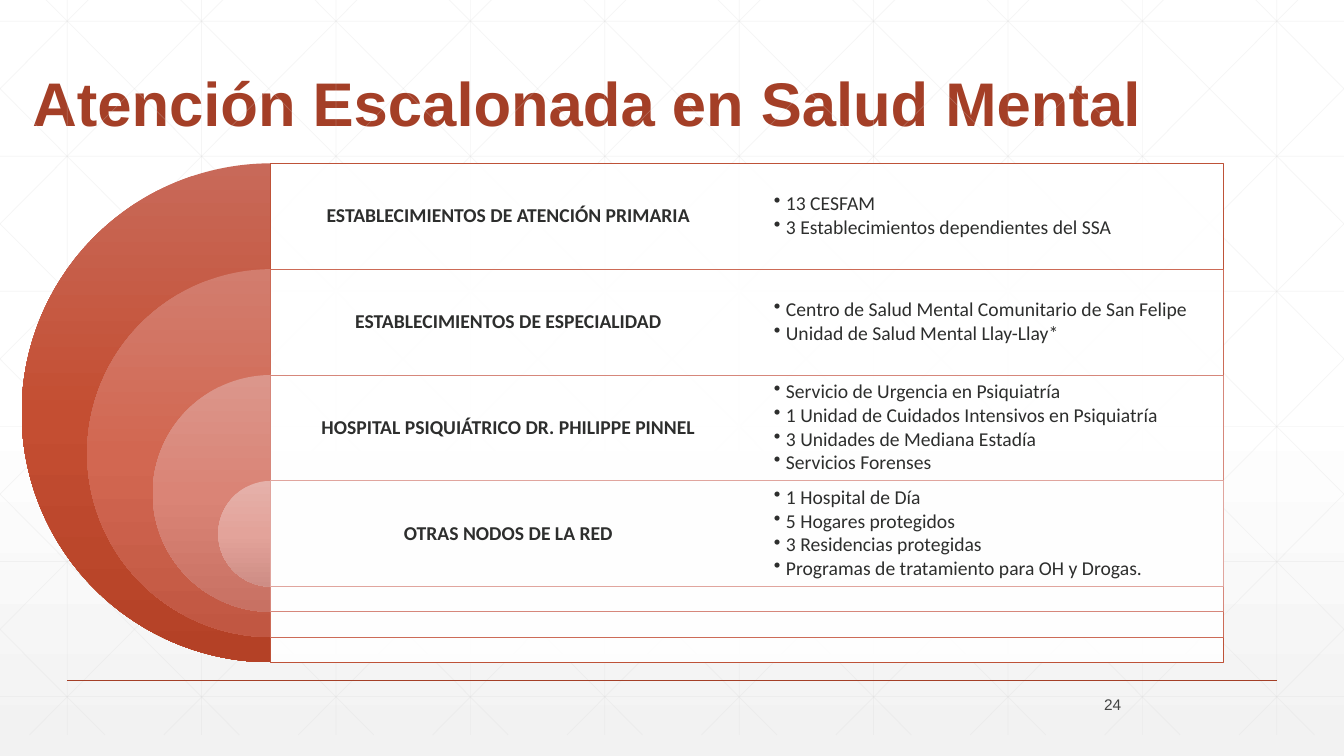
"""Build the slide on stepped mental health care: nested half discs beside four rows of services."""
from lxml import etree
from pptx import Presentation, util as u
from pptx.dml.color import RGBColor
from pptx.enum import shapes, text
from pptx.oxml.ns import qn

COLOURS = {"grid": "D9D9D9", "accent": "A43F27", "number": "424342", "ink": "2D2E2D", "panel": "FFFFFF"}
BACKDROP = [(0, "FFFFFF"), (53, "FFFFFF"), (100, "F2F2F2")]
WIDTH, HEIGHT = 13.33, 7.5
CELL = WIDTH / 10
GRID_TOP, GRID_BOTTOM = -0.21, 7.29
LEAN = 0.994
ROW, STEP = 1.05, 1.3
DISC, DISC_TOP, DISC_CENTRE = 4.95, 1.62, 2.69
PANEL_LEFT, PANEL_WIDTH = 2.68, 9.45
COLUMN = PANEL_WIDTH / 2

LEVELS = [
    ("ESTABLECIMIENTOS DE ATENCIÓN PRIMARIA",
     ["13 CESFAM", "3 Establecimientos dependientes del SSA"],
     ["C86959", "C44E32", "B44126"], "BE5238"),
    ("ESTABLECIMIENTOS DE ESPECIALIDAD",
     ["Centro de Salud Mental Comunitario de San Felipe", "Unidad de Salud Mental Llay-Llay*"],
     ["D27D6E", "D26751", "C15742"], "CC6B57"),
    ("HOSPITAL PSIQUIÁTRICO DR. PHILIPPE PINNEL",
     ["Servicio de Urgencia en Psiquiatría", "1 Unidad de Cuidados Intensivos en Psiquiatría",
      "3 Unidades de Mediana Estadía", "Servicios Forenses"],
     ["DB968B", "DA8476", "C87163"], "D6877B"),
    ("OTRAS NODOS DE LA RED",
     ["1 Hospital de Día", "5 Hogares protegidos", "3 Residencias protegidas",
      "Programas de tratamiento para OH y Drogas."],
     ["E5B1AA", "E3A39A", "CE8D85"], "E0A59E"),
]


def shade(fill, element, stops):
    """Fill from top to bottom through the given (percent, colour) stops."""
    fill.gradient()
    fill.gradient_angle = 270
    stop_list = element.find(".//" + qn("a:gsLst"))
    for default_stop in list(stop_list):
        stop_list.remove(default_stop)
    for percent, colour in stops:
        stop = etree.SubElement(stop_list, qn("a:gs"), pos=str(percent * 1000))
        etree.SubElement(stop, qn("a:srgbClr"), val=colour)


def write(frame, lines, size, colour, font, bold, align, anchor, margins=(0.1, 0.05)):
    """Set the lines of a text frame and return its paragraphs."""
    side, edge = (u.Inches(margin) for margin in margins)
    frame_format = {"text": "\n".join(lines), "word_wrap": True, "vertical_anchor": anchor,
                    "auto_size": text.MSO_AUTO_SIZE.NONE, "margin_left": side, "margin_right": side,
                    "margin_top": edge, "margin_bottom": edge}
    for name, value in frame_format.items():
        setattr(frame, name, value)
    for paragraph in frame.paragraphs:
        paragraph.alignment = align
        paragraph.line_spacing = 0.9
        run_font = paragraph.runs[0].font
        for name, value in {"size": u.Pt(size), "name": font, "bold": bold}.items():
            setattr(run_font, name, value)
        run_font.color.rgb = RGBColor.from_string(colour)
    return frame.paragraphs


deck = Presentation()
deck.slide_width, deck.slide_height = u.Inches(WIDTH), u.Inches(HEIGHT)
slide = deck.slides.add_slide(deck.slide_layouts[5])
shade(slide.background.fill, slide.element, BACKDROP)

rules = []
for column in range(10):
    x = CELL * (column + 0.5)
    rules.append((x, GRID_TOP, x, GRID_BOTTOM, "grid", 0.5))
for line in range(6):
    y = 0.21 + 1.34 * line
    rules.append((0, y, WIDTH, y, "grid", 0.5))
for diagonal in range(-5, 10):
    start = 0.25 + CELL * diagonal
    left = max(start, 0)
    right = min(start + LEAN * (GRID_BOTTOM - GRID_TOP), WIDTH)
    top, bottom = (GRID_TOP + (x - start) / LEAN for x in (left, right))
    rules.append((left, top, right, bottom, "grid", 0.5))
    rules.append((WIDTH - left, top, WIDTH - right, bottom, "grid", 0.5))
rules.append((CELL / 2, HEIGHT * 0.9, WIDTH - CELL / 2, HEIGHT * 0.9, "accent", 1))

for *ends, role, weight in rules:
    rule = slide.shapes.add_connector(shapes.MSO_CONNECTOR.STRAIGHT, *map(u.Inches, ends))
    rule.line.color.rgb = RGBColor.from_string(COLOURS[role])
    rule.line.width = u.Pt(weight)
    if role == "grid":
        etree.SubElement(rule.element.find(".//" + qn("a:srgbClr")), qn("a:alpha"), val="25000")
    etree.SubElement(rule.element.spPr, qn("a:effectLst"))

heading = slide.shapes.title
for name, value in {"left": 0.22, "top": 0.19, "width": 11.91, "height": 1.25}.items():
    setattr(heading, name, u.Inches(value))
write(heading.text_frame, ["Atención Escalonada en Salud Mental"], 44, COLOURS["accent"], "Arial", True,
      text.PP_ALIGN.LEFT, text.MSO_ANCHOR.BOTTOM)

page_number = slide.shapes.add_textbox(*map(u.Inches, (10.16, 6.88, 1.06, 0.24)))
write(page_number.text_frame, ["24"], 11, COLOURS["number"], "Arial", False,
      text.PP_ALIGN.RIGHT, text.MSO_ANCHOR.MIDDLE)

for index, (level, services, tones, outline) in enumerate(LEVELS):
    top = DISC_TOP + ROW * index
    size = DISC - STEP * index

    half_disc = slide.shapes.add_shape(
        shapes.MSO_SHAPE.PIE, *map(u.Inches, (DISC_CENTRE - size / 2, top, size, size)))
    half_disc.adjustments[0], half_disc.adjustments[1] = 54, 162
    half_disc.shadow.inherit = False
    half_disc.line.fill.background()
    shade(half_disc.fill, half_disc.element, zip((0, 50, 100), tones))

    panel = slide.shapes.add_shape(
        shapes.MSO_SHAPE.RECTANGLE, *map(u.Inches, (PANEL_LEFT, top, PANEL_WIDTH, size)))
    panel.shadow.inherit = False
    panel.fill.solid()
    panel.fill.fore_color.rgb = RGBColor.from_string(COLOURS["panel"])
    etree.SubElement(panel.element.find(".//" + qn("a:srgbClr")), qn("a:alpha"), val="90000")
    panel.line.color.rgb = RGBColor.from_string(outline)
    panel.line.width = u.Pt(0.5)

    level_name = slide.shapes.add_textbox(*map(u.Inches, (PANEL_LEFT, top, COLUMN, ROW)))
    write(level_name.text_frame, [level], 14, COLOURS["ink"], "Calibri", True,
          text.PP_ALIGN.CENTER, text.MSO_ANCHOR.MIDDLE, (0.06, 0.06))

    service_list = slide.shapes.add_textbox(*map(u.Inches, (PANEL_LEFT + COLUMN, top, COLUMN, ROW)))
    for service in write(service_list.text_frame, services, 14, COLOURS["ink"], "Calibri", False,
                         text.PP_ALIGN.LEFT, text.MSO_ANCHOR.MIDDLE, (0.27, 0.03)):
        service.space_after = u.Pt(1.8)
        properties = service._p.get_or_add_pPr()
        properties.set("marL", str(u.Inches(0.12)))
        properties.set("indent", str(-u.Inches(0.12)))
        etree.SubElement(properties, qn("a:buChar"), char="•")

deck.save("out.pptx")
